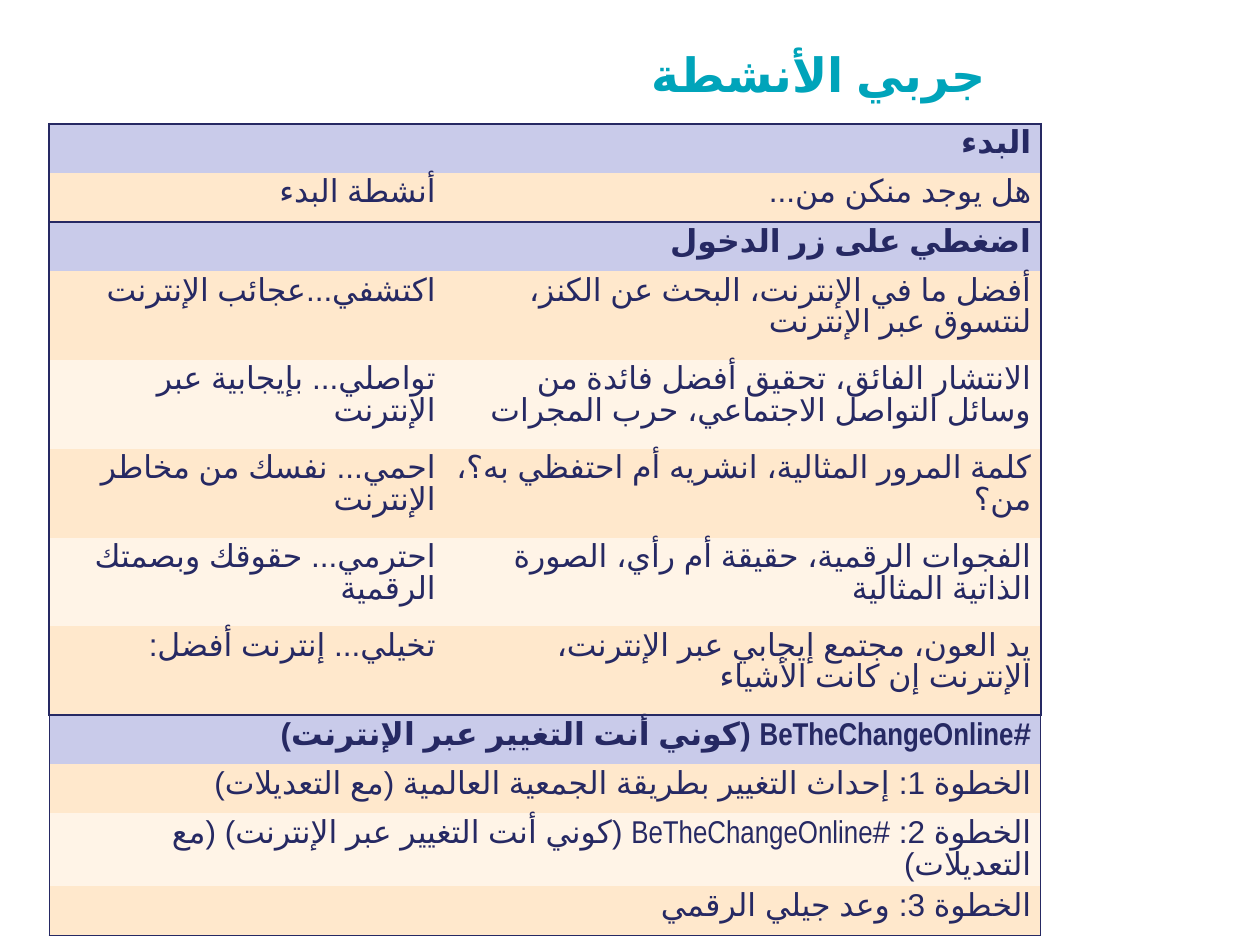
from lxml import etree
from pptx import Presentation
from pptx import util as u
from pptx.dml import color
from pptx.oxml import ns
from pptx.enum import text

PX = 9144
NAVY, TEAL = "262963", "00A4BA"
LILAC, PEACH, CREAM = "C9CBEA", "FFE8CC", "FFF4E7"
PLAIN_STYLE = "{2D5ABB26-0587-4C30-8999-92F81FD0307C}"
COLUMNS = [419, 630]
ROW, TALL_ROW = 52, 94

SECTIONS = [
    ("البدء", 1.5, ROW, [
        ("أنشطة البدء", "هل يوجد منكن من..."),
    ]),
    ("اضغطي على زر الدخول", 1.5, TALL_ROW, [
        ("اكتشفي...عجائب الإنترنت",
         "أفضل ما في الإنترنت، البحث عن الكنز، لنتسوق عبر الإنترنت"),
        ("تواصلي... بإيجابية عبر الإنترنت",
         "الانتشار الفائق، تحقيق أفضل فائدة من وسائل التواصل الاجتماعي، حرب المجرات"),
        ("احمي... نفسك من مخاطر الإنترنت",
         "كلمة المرور المثالية، انشريه أم احتفظي به؟، من؟"),
        ("احترمي... حقوقك وبصمتك الرقمية",
         "الفجوات الرقمية، حقيقة أم رأي، الصورة الذاتية المثالية"),
        ("تخيلي... إنترنت أفضل:",
         "يد العون، مجتمع إيجابي عبر الإنترنت، الإنترنت إن كانت الأشياء"),
    ]),
    ("#BeTheChangeOnline (كوني أنت التغيير عبر الإنترنت)", 1, ROW, [
        ("الخطوة 1: إحداث التغيير بطريقة الجمعية العالمية (مع التعديلات)",),
        ("الخطوة 2: #BeTheChangeOnline (كوني أنت التغيير عبر الإنترنت) (مع التعديلات)",),
        ("الخطوة 3: وعد جيلي الرقمي",),
    ]),
]


def px(length):
    return u.Emu(length * PX)


def rgb(value):
    return color.RGBColor.from_string(value)


def set_all(target, values):
    for name, value in values.items():
        setattr(target, name, value)


def write_arabic(frame, words, hue, **font):
    paragraph = frame.paragraphs[0]
    set_all(paragraph, {"alignment": text.PP_ALIGN.RIGHT, "line_spacing": 0.9,
                        "space_before": u.Pt(0)})
    paragraph._p.get_or_add_pPr().set("rtl", "1")
    run = paragraph.add_run()
    run.text = words
    set_all(run.font, font)
    run.font.color.rgb = rgb(hue)
    properties = run._r.get_or_add_rPr()
    properties.set("lang", "ar")
    script_font = etree.SubElement(properties, ns.qn("a:cs"))
    for name, value in {"typeface": "Arial", "pitchFamily": "34", "charset": "0"}.items():
        script_font.set(name, value)


def add_borders(cell, widths):
    properties = cell._tc.get_or_add_tcPr()
    for side in "LRTB":
        line = etree.SubElement(properties, ns.qn(f"a:ln{side}"))
        if side in widths:
            line.set("w", str(u.Pt(widths[side])))
            fill = etree.SubElement(line, ns.qn("a:solidFill"))
            etree.SubElement(fill, ns.qn("a:srgbClr")).set("val", NAVY)
        else:
            etree.SubElement(line, ns.qn("a:noFill"))


def add_title(slide, left, top, width, height):
    title = slide.shapes.title
    set_all(title, {"left": px(left), "top": px(top),
                    "width": px(width), "height": px(height)})
    set_all(title.text_frame, {
        "margin_left": 0, "margin_right": 0, "margin_top": 0, "margin_bottom": 0,
        "word_wrap": True, "auto_size": text.MSO_AUTO_SIZE.NONE,
        "vertical_anchor": text.MSO_ANCHOR.MIDDLE})
    write_arabic(title.text_frame, "جربي الأنشطة", TEAL,
                 name="Arial", size=u.Pt(36), bold=True)


def fill_row(table, index, words, fill, widths, bold):
    merged = len(words) == 1
    if merged:
        table.cell(index, 0).merge(table.cell(index, 1))
    for column, inner_side in enumerate("RL"):
        cell = table.cell(index, column)
        add_borders(cell, {side: width for side, width in widths.items()
                           if merged or side != inner_side})
        cell.fill.solid()
        cell.fill.fore_color.rgb = rgb(fill)
        set_all(cell, {"margin_left": px(10), "margin_right": px(10),
                       "margin_top": px(5), "margin_bottom": px(5)})
        if column < len(words):
            write_arabic(cell.text_frame, words[column], NAVY,
                         name="Arial Narrow", size=u.Pt(24), bold=bold)


def add_activities(slide, left, top):
    row_count = sum(1 + len(rows) for _, _, _, rows in SECTIONS)
    height = sum(ROW + tall * len(rows) for _, _, tall, rows in SECTIONS)
    frame = slide.shapes.add_table(row_count, len(COLUMNS), px(left), px(top),
                                   px(sum(COLUMNS)), px(height))
    table = frame.table
    set_all(table, {"first_row": False, "horz_banding": False})
    table._tbl.tblPr.find(ns.qn("a:tableStyleId")).text = PLAIN_STYLE
    for column, width in zip(table.columns, COLUMNS):
        column.width = px(width)
    index = 0
    for heading, line, row_height, rows in SECTIONS:
        sides = {"L": line, "R": line}
        table.rows[index].height = px(ROW)
        fill_row(table, index, (heading,), LILAC, {**sides, "T": 1.5}, True)
        for number, words in enumerate(rows, 1):
            widths = {**sides, "B": line} if number == len(rows) else sides
            table.rows[index + number].height = px(row_height)
            fill_row(table, index + number, words,
                     PEACH if number % 2 else CREAM, widths, False)
        index += 1 + len(rows)


def main():
    presentation = Presentation()
    set_all(presentation, {"slide_width": px(1333), "slide_height": px(1000)})
    slide = presentation.slides.add_slide(presentation.slide_layouts[5])
    add_title(slide, -93, 56, 1136, 52)
    add_activities(slide, 52, 131)
    presentation.save("out.pptx")


if __name__ == "__main__":
    main()
